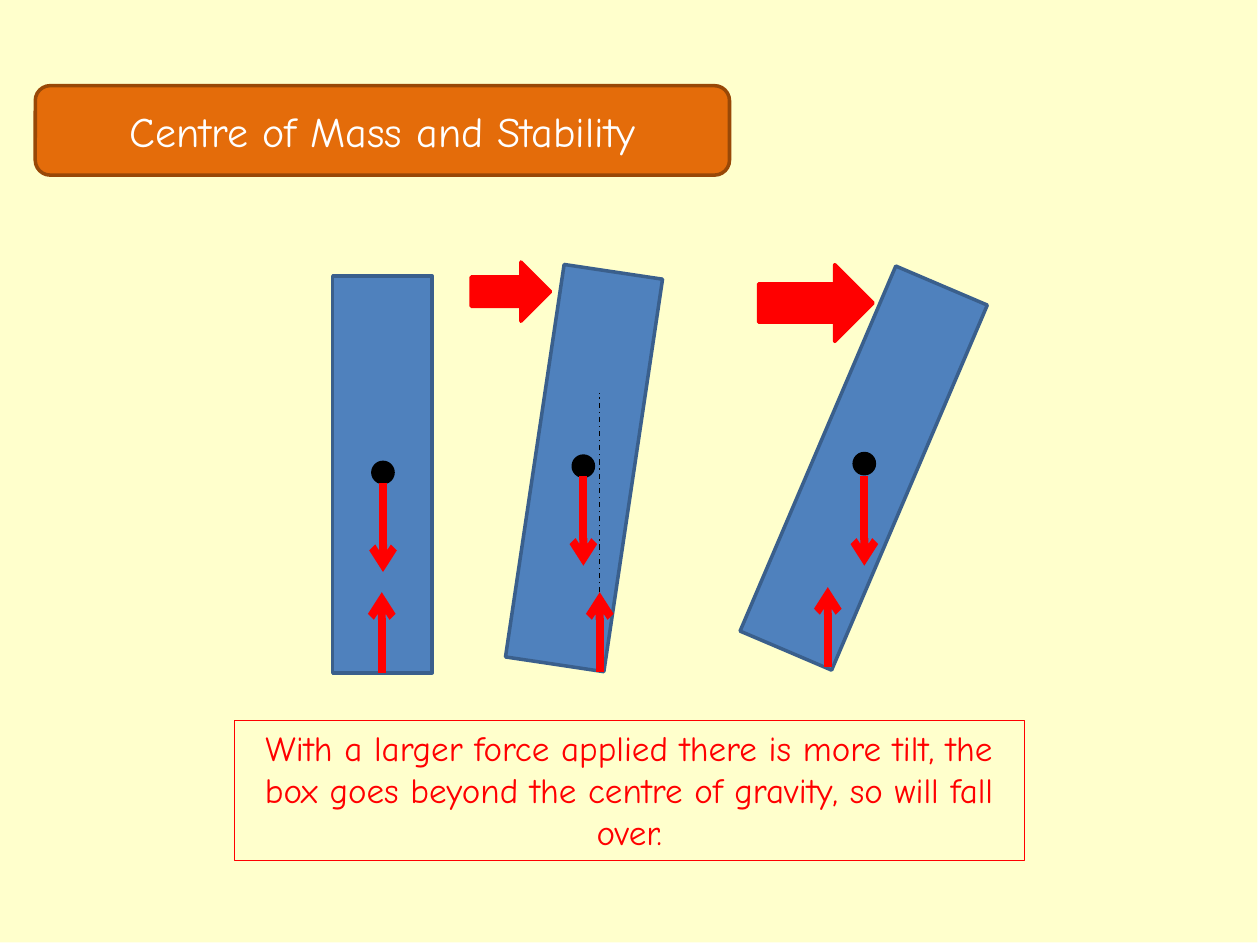
import lxml.etree
import pptx
import pptx.util
import pptx.dml.color
import pptx.enum.dml
import pptx.enum.shapes
import pptx.enum.text
import pptx.oxml.ns
from pptx.util import Inches

COLORS = {
    "cream": "FFFFCC",
    "orange": "E46C0A",
    "brown": "984807",
    "blue": "4F81BD",
    "navy": "3A5F8C",
    "red": "FF0000",
    "black": "000000",
    "white": "FFFFFF",
}
FONT = "Comic Neue"
SHAPES = pptx.enum.shapes.MSO_SHAPE

BLOCK_WIDTH, BLOCK_HEIGHT = 0.79, 3.15
DOT_SIZE = 0.16
WEIGHT_LENGTH = 0.71

# Block left, top and tilt; dot centre height; weight top;
# reaction x, bottom and top.
BLOCKS = [
    (2.64, 2.19, 0, 3.75, 3.83, 3.03, 5.34, 4.70),
    (4.24, 2.14, 8.5, 3.70, 3.78, 4.76, 5.33, 4.70),
    (6.46, 2.14, 23.1, 3.68, 3.78, 6.57, 5.29, 4.66),
]
PUSHES = [(3.74, 2.08, 0.63, 0.47), (6.02, 2.10, 0.91, 0.61)]


def rgb(name):
    return pptx.dml.color.RGBColor.from_string(COLORS[name])


def add_shape(page, kind, bounds, fill=None, line=None, width=2):
    shape = page.shapes.add_shape(kind, *map(Inches, bounds))
    shape.shadow.inherit = False
    if fill:
        shape.fill.solid()
        shape.fill.fore_color.rgb = rgb(fill)
    else:
        shape.fill.background()
    if line:
        shape.line.color.rgb = rgb(line)
        shape.line.width = pptx.util.Pt(width)
    else:
        shape.line.fill.background()
    return shape


def write_text(shape, text, size, color, anchor):
    frame = shape.text_frame
    frame.word_wrap = True
    frame.vertical_anchor = anchor
    frame.text = text
    para = frame.paragraphs[0]
    para.alignment = pptx.enum.text.PP_ALIGN.CENTER
    font = para.runs[0].font
    font.name = FONT
    font.size = pptx.util.Pt(size)
    font.color.rgb = rgb(color)


def add_line(page, x, start, end, color, width):
    """Draw a vertical line at x."""
    line = page.shapes.add_connector(
        pptx.enum.shapes.MSO_CONNECTOR.STRAIGHT,
        Inches(x), Inches(start), Inches(x), Inches(end))
    line.line.color.rgb = rgb(color)
    line.line.width = pptx.util.Pt(width)
    lxml.etree.SubElement(line._element.spPr, pptx.oxml.ns.qn("a:effectLst"))
    return line


def add_force(page, x, start, end):
    force = add_line(page, x, start, end, "red", 4.5)
    outline = force._element.spPr.find(pptx.oxml.ns.qn("a:ln"))
    lxml.etree.SubElement(outline, pptx.oxml.ns.qn("a:tailEnd"), type="arrow")


def add_block(page, left, top, tilt, dot_y, weight_top,
              reaction_x, reaction_bottom, reaction_top):
    """Draw a tilted block with its centre of mass, weight and reaction."""
    block = add_shape(page, SHAPES.RECTANGLE,
                      (left, top, BLOCK_WIDTH, BLOCK_HEIGHT), "blue", "navy")
    block.rotation = tilt
    centre_x = round(left + BLOCK_WIDTH / 2, 2)
    dot = (centre_x - DOT_SIZE / 2, dot_y - DOT_SIZE / 2, DOT_SIZE, DOT_SIZE)
    add_shape(page, SHAPES.OVAL, dot, "black", "black")
    add_force(page, centre_x, weight_top, weight_top + WEIGHT_LENGTH)
    add_force(page, reaction_x, reaction_bottom, reaction_top)


def main():
    deck = pptx.Presentation()
    deck.slide_width, deck.slide_height = Inches(10), Inches(7.5)
    page = deck.slides.add_slide(deck.slide_layouts[6])

    add_shape(page, SHAPES.RECTANGLE, (-0.02, -0.02, 10, 7.5), "cream")
    title = add_shape(page, SHAPES.ROUNDED_RECTANGLE,
                      (0.28, 0.68, 5.51, 0.71), "orange", "brown")
    write_text(title, "Centre of Mass and Stability", 24, "white",
               pptx.enum.text.MSO_ANCHOR.MIDDLE)

    for block in BLOCKS:
        add_block(page, *block)
    pivot_line = add_line(page, 4.76, 4.70, 3.12, "black", 0.75)
    pivot_line.line.dash_style = pptx.enum.dml.MSO_LINE.DASH_DOT
    for push in PUSHES:
        add_shape(page, SHAPES.RIGHT_ARROW, push, "red", "red")

    caption = add_shape(page, SHAPES.RECTANGLE, (1.86, 5.72, 6.27, 1.11),
                        line="red", width=0.75)
    write_text(caption,
               "With a larger force applied there is more tilt, the box goes "
               "beyond the centre of gravity, so will fall over.",
               20, "red", pptx.enum.text.MSO_ANCHOR.TOP)
    caption.text_frame.auto_size = pptx.enum.text.MSO_AUTO_SIZE.SHAPE_TO_FIT_TEXT

    deck.save("out.pptx")


if __name__ == "__main__":
    main()
